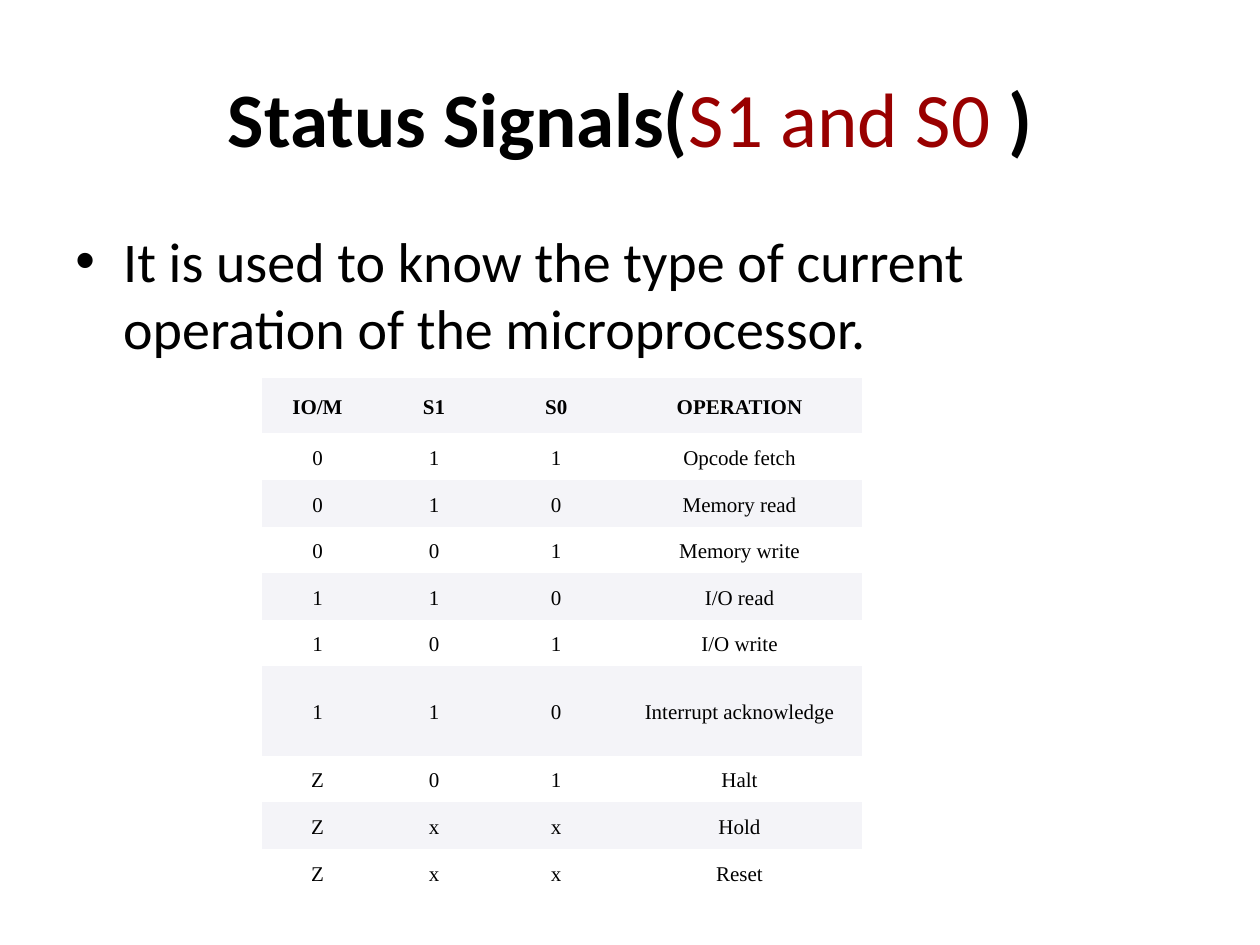
from lxml import etree
from pptx import Presentation
from pptx.dml.color import RGBColor
from pptx.enum.text import MSO_ANCHOR, PP_ALIGN
from pptx.oxml.ns import qn
from pptx.util import Inches, Pt

CENTER = PP_ALIGN.CENTER
LEFT = PP_ALIGN.LEFT
MIDDLE = MSO_ANCHOR.MIDDLE
TOP = MSO_ANCHOR.TOP
PLAIN_TABLE = "{2D5ABB26-0587-4C30-8999-92F81FD0307C}"

OPERATIONS = [
    ("IO/M", "S1", "S0", "OPERATION"),
    ("0", "1", "1", "Opcode fetch"),
    ("0", "1", "0", "Memory read"),
    ("0", "0", "1", "Memory write"),
    ("1", "1", "0", "I/O read"),
    ("1", "0", "1", "I/O write"),
    ("1", "1", "0", "Interrupt acknowledge"),
    ("Z", "0", "1", "Halt"),
    ("Z", "x", "x", "Hold"),
    ("Z", "x", "x", "Reset"),
]


def color(hex_code):
    return RGBColor.from_string(hex_code)


class StatusSlide:
    heading_font = "Calibri"
    table_font = "Times New Roman"
    ink = "000000"
    accent = "990000"
    band = "F4F4F8"

    def __init__(self, deck):
        self.width, self.height = deck.slide_width, deck.slide_height
        self.slide = deck.slides.add_slide(deck.slide_layouts[6])

    def place(self, left, top, width, height):
        return (int(left * self.width), int(top * self.height),
                int(width * self.width), int(height * self.height))

    def style(self, paragraph, font, size, align):
        paragraph.alignment = align
        paragraph.font.name = font
        paragraph.font.size = Pt(size)
        paragraph.font.color.rgb = color(self.ink)

    def text_area(self, share, size, align, anchor):
        frame = self.slide.shapes.add_textbox(*self.place(*share)).text_frame
        frame.word_wrap = True
        frame.vertical_anchor = anchor
        paragraph = frame.paragraphs[0]
        self.style(paragraph, self.heading_font, size, align)
        return paragraph

    def title(self, share, parts):
        heading = self.text_area(share, 44, CENTER, MIDDLE)
        for words, highlighted in parts:
            run = heading.add_run()
            run.text = words
            run.font.bold = not highlighted
            run.font.color.rgb = color(self.accent if highlighted else self.ink)

    def bullet(self, share, words):
        point = self.text_area(share, 32, LEFT, TOP)
        point.add_run().text = words
        properties = point._p.get_or_add_pPr()
        properties.set("marL", str(Inches(0.38)))
        properties.set("indent", str(-Inches(0.38)))
        spacing = etree.Element(qn("a:spcBef"))
        etree.SubElement(spacing, qn("a:spcPct")).set("val", "20000")
        marker_font = etree.Element(qn("a:buFont"))
        marker_font.set("typeface", "Arial")
        marker = etree.Element(qn("a:buChar"))
        marker.set("char", "•")
        for position, element in enumerate((spacing, marker_font, marker)):
            properties.insert(position, element)

    def table(self, share, rows, widths, heights):
        table = self.slide.shapes.add_table(
            len(rows), len(widths), *self.place(*share)).table
        table.first_row = table.horz_banding = False
        table._tbl.tblPr.find(qn("a:tableStyleId")).text = PLAIN_TABLE
        for column, width in zip(table.columns, widths):
            column.width = Inches(width)
        for index, (row, height, values) in enumerate(
                zip(table.rows, heights, rows)):
            row.height = Inches(height)
            for cell, value in zip(row.cells, values):
                self.cell(cell, value, header=index == 0, banded=index % 2 == 0)

    def cell(self, cell, value, header, banded):
        cell.text = value
        cell.vertical_anchor = MIDDLE
        cell.margin_left = cell.margin_right = Inches(0.01)
        cell.margin_top = cell.margin_bottom = Inches(0.01)
        if banded:
            cell.fill.solid()
            cell.fill.fore_color.rgb = color(self.band)
        else:
            cell.fill.background()
        paragraph = cell.text_frame.paragraphs[0]
        self.style(paragraph, self.table_font, 12, CENTER)
        paragraph.line_spacing = 1.15
        paragraph.font.bold = header


def main():
    deck = Presentation()
    deck.slide_width, deck.slide_height = Inches(10), Inches(7.5)
    page = StatusSlide(deck)
    page.title((0.05, 0.04, 0.9, 1 / 6),
               [("Status Signals(", False), ("S1 and S0 ", True), (")", False)])
    page.bullet((0.05, 7 / 30, 0.9, 23 / 30),
                "It is used to know the type of current operation "
                "of the microprocessor.")
    page.table((0.208, 0.4, 0.475, 0.544), OPERATIONS,
               widths=[0.88, 0.97, 0.97, 1.94],
               heights=[0.44] + [0.37] * 5 + [0.71] + [0.37] * 3)
    deck.save("out.pptx")


if __name__ == "__main__":
    main()
